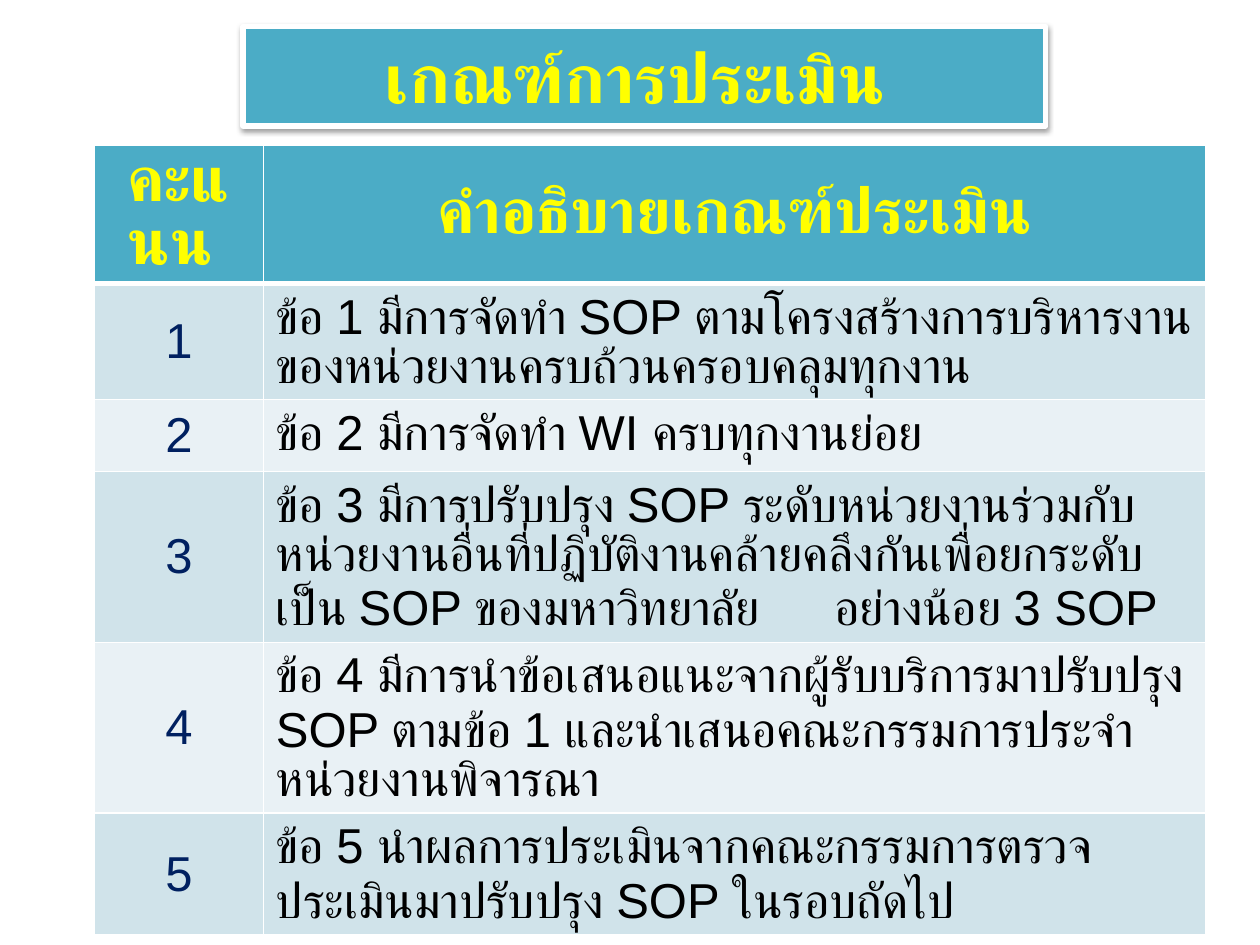
from dataclasses import dataclass

import pptx
import pptx.dml.color
import pptx.enum.shapes
import pptx.enum.text
import pptx.oxml
import pptx.oxml.ns
import pptx.util
from pptx.dml.color import RGBColor
from pptx.util import Inches

TEAL = RGBColor(0x4B, 0xAC, 0xC6)
DARK = RGBColor(0xD0, 0xE3, 0xEA)
PALE = RGBColor(0xE9, 0xF1, 0xF5)
WHITE = RGBColor(0xFF, 0xFF, 0xFF)
GOLD = RGBColor(0xFF, 0xFF, 0x00)
NAVY = RGBColor(0x00, 0x20, 0x60)
BLACK = RGBColor(0x00, 0x00, 0x00)

CENTER = pptx.enum.text.PP_ALIGN.CENTER
LEFT = pptx.enum.text.PP_ALIGN.LEFT
MIDDLE = pptx.enum.text.MSO_ANCHOR.MIDDLE
TOP = pptx.enum.text.MSO_ANCHOR.TOP
NS = pptx.oxml.ns.nsdecls("a")


@dataclass
class Level:
    """One scored row of the criteria table."""
    score: str
    text: str
    height: float = 0.84


LEVELS = [
    Level("1", "ข้อ 1 มีการจัดทำ SOP ตามโครงสร้างการบริหารงานของหน่วยงานครบถ้วนครอบคลุมทุกงาน"),
    Level("2", "ข้อ 2 มีการจัดทำ WI ครบทุกงานย่อย", 0.57),
    Level("3", "ข้อ 3 มีการปรับปรุง SOP ระดับหน่วยงานร่วมกับหน่วยงานอื่นที่ปฏิบัติงานคล้ายคลึงกัน"
               "เพื่อยกระดับเป็น SOP ของมหาวิทยาลัย\tอย่างน้อย 3 SOP"),
    Level("4", "ข้อ 4 มีการนำข้อเสนอแนะจากผู้รับบริการมาปรับปรุง SOP ตามข้อ 1 "
               "และนำเสนอคณะกรรมการประจำหน่วยงานพิจารณา"),
    Level("5", "ข้อ 5 นำผลการประเมินจากคณะกรรมการตรวจประเมินมาปรับปรุง SOP ในรอบถัดไป"),
]
HEAD = Level("คะแนน ", "คำอธิบายเกณฑ์ประเมิน")


def write(frame, text: str, *, size: float, color: RGBColor, font: str = "Arial",
          bold: bool = False, align=CENTER, tab: float = 0) -> None:
    para = frame.paragraphs[0]
    para.alignment = align
    if tab:
        para._p.get_or_add_pPr().append(pptx.oxml.parse_xml(
            f'<a:tabLst {NS}><a:tab pos="{Inches(tab)}" algn="l"/></a:tabLst>'))
    run = para.add_run()
    run.text = text
    run.font.name = font
    run.font.size = pptx.util.Pt(size)
    run.font.bold = bold
    run.font.color.rgb = color


def edge(cell, side: str, width: float) -> None:
    cell._tc.get_or_add_tcPr().append(pptx.oxml.parse_xml(
        f'<a:ln{side} {NS} w="{pptx.util.Pt(width)}"><a:solidFill>'
        f'<a:srgbClr val="{WHITE}"/></a:solidFill></a:ln{side}>'))


def paint(cell, fill: RGBColor, top: float, base: float) -> None:
    for side, width in (("L", 1), ("R", 1), ("T", top), ("B", base)):
        edge(cell, side, width)
    cell.fill.solid()
    cell.fill.fore_color.rgb = fill


def banner(slide, text: str) -> None:
    box = slide.shapes.add_shape(pptx.enum.shapes.MSO_SHAPE.RECTANGLE,
                                 Inches(1.93), Inches(0.21), Inches(6.37), Inches(0.79))
    box.fill.solid()
    box.fill.fore_color.rgb = TEAL
    box.line.color.rgb = WHITE
    box.line.width = pptx.util.Pt(3)
    # Soft shadow straight below
    box.shadow.inherit = False
    blur, dist = pptx.util.Pt(3.1), pptx.util.Pt(1.6)
    box._element.spPr.find(pptx.oxml.ns.qn("a:effectLst")).append(pptx.oxml.parse_xml(
        f'<a:outerShdw {NS} blurRad="{blur}" dist="{dist}" dir="5400000" rotWithShape="0">'
        f'<a:srgbClr val="{BLACK}"><a:alpha val="38000"/></a:srgbClr></a:outerShdw>'))
    box.text_frame.word_wrap = True
    box.text_frame.vertical_anchor = MIDDLE
    write(box.text_frame, text, size=39.6, color=GOLD, font="Calibri", bold=True)


def grid(slide, levels: list[Level]) -> None:
    rows = [HEAD, *levels]
    table = slide.shapes.add_table(len(rows), 2, Inches(0.75), Inches(1.15), Inches(8.82),
                                   Inches(sum(row.height for row in rows))).table
    for col, width in zip(table.columns, (1.34, 7.48)):
        col.width = Inches(width)
    for num, row in enumerate(rows):
        table.rows[num].height = Inches(row.height)
        score, body = table.cell(num, 0), table.cell(num, 1)
        fill = TEAL if num == 0 else DARK if num % 2 else PALE
        for cell in (score, body):
            paint(cell, fill, top=3 if num == 1 else 1, base=3 if num == 0 else 1)
        score.vertical_anchor = MIDDLE
        if num == 0:
            body.vertical_anchor = MIDDLE
            for cell, text in ((score, row.score), (body, row.text)):
                write(cell.text_frame, text, size=36, color=GOLD, font="Calibri", bold=True)
        else:
            body.vertical_anchor = TOP
            write(score.text_frame, row.score, size=28, color=NAVY)
            write(body.text_frame, row.text, size=28, color=BLACK, align=LEFT,
                  tab=4.43 if "\t" in row.text else 0)


def main() -> None:
    deck = pptx.Presentation()
    deck.slide_width, deck.slide_height = Inches(10), Inches(7.5)
    slide = deck.slides.add_slide(deck.slide_layouts[6])
    banner(slide, "เกณฑ์การประเมิน ")
    grid(slide, LEVELS)
    deck.save("out.pptx")


if __name__ == "__main__":
    main()
